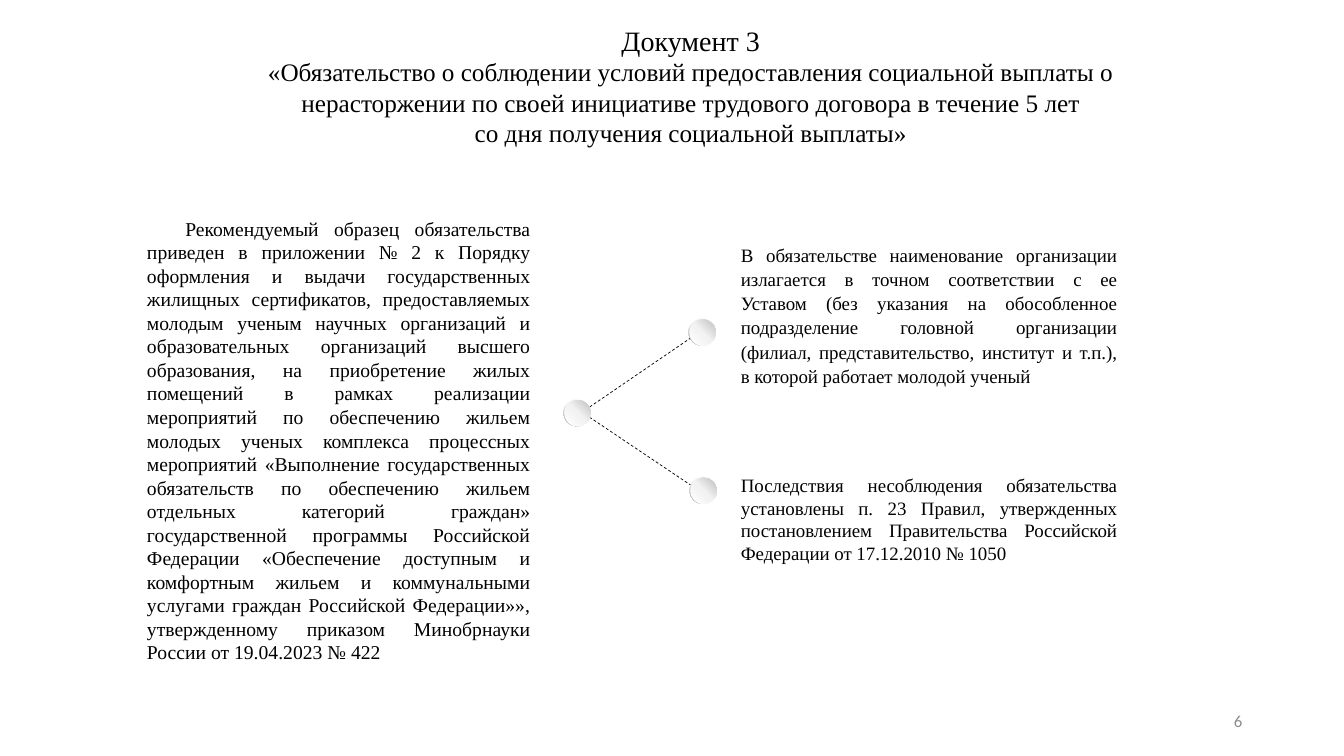
"""Builds the slide about the document 3 obligation."""
from copy import deepcopy

from lxml import etree
from pptx import Presentation
from pptx.dml.color import RGBColor
from pptx.enum import dml, shapes, text
from pptx.oxml import ns
from pptx.util import Inches, Pt

COLORS = {"text": "000000", "panel": "FFFFFF", "number": "8C8C8C", "light": "FFFFFF",
          "middle": "F2F2F2", "rim": "A6A6A6", "edge": "BFBFBF"}
SERIF = "Times New Roman"
ALIGN = text.PP_ALIGN

TITLE = [
    ("Документ 3", 20),
    ("«Обязательство о соблюдении условий предоставления социальной выплаты о "
     "нерасторжении по своей инициативе трудового договора в течение 5 лет", 18),
    ("со дня получения социальной выплаты»", 18),
]
SAMPLE = (
    "Рекомендуемый образец обязательства приведен в приложении № 2 к Порядку "
    "оформления и выдачи государственных жилищных сертификатов, предоставляемых "
    "молодым ученым научных организаций и образовательных организаций высшего "
    "образования, на приобретение жилых помещений в рамках реализации мероприятий "
    "по обеспечению жильем молодых ученых комплекса процессных мероприятий "
    "«Выполнение государственных обязательств по обеспечению жильем отдельных "
    "категорий граждан» государственной программы Российской Федерации "
    "«Обеспечение доступным и комфортным жильем и коммунальными услугами граждан "
    "Российской Федерации»», утвержденному приказом Минобрнауки России "
    "от 19.04.2023 № 422")
NAMING = (
    "В обязательстве наименование организации излагается в точном соответствии "
    "с ее Уставом (без указания на обособленное подразделение головной организации "
    "(филиал, представительство, институт и т.п.), в которой работает молодой ученый")
CONSEQUENCES = (
    "Последствия несоблюдения обязательства установлены п. 23 Правил, утвержденных "
    "постановлением Правительства Российской Федерации от 17.12.2010 № 1050")


def rgb(name):
    return RGBColor.from_string(COLORS[name])


def write(sp, lines, align, color="text", font=SERIF, grow=True):
    """Fill a shape with (text, size) paragraphs and return its text frame."""
    tf = sp.text_frame
    tf.word_wrap = True
    tf.auto_size = text.MSO_AUTO_SIZE.SHAPE_TO_FIT_TEXT if grow else text.MSO_AUTO_SIZE.NONE
    for i, (line, size) in enumerate(lines):
        p = tf.add_paragraph() if i else tf.paragraphs[0]
        p.text = line
        p.alignment = align
        p.font.name = font
        p.font.size = Pt(size)
        p.font.color.rgb = rgb(color)
    return tf


def add_text(s, box, *args, **options):
    return write(s.shapes.add_textbox(*map(Inches, box)), *args, **options)


def add_panel(s, box, line, size, indent):
    """Add a plain rectangle holding one paragraph with a first-line indent."""
    sp = s.shapes.add_shape(shapes.MSO_SHAPE.RECTANGLE, *map(Inches, box))
    sp.shadow.inherit = False
    sp.fill.solid()
    sp.fill.fore_color.rgb = rgb("panel")
    sp.line.fill.background()
    tf = write(sp, [(line, size)], ALIGN.JUSTIFY)
    tf.vertical_anchor = text.MSO_ANCHOR.TOP
    pPr = tf.paragraphs[0]._p.get_or_add_pPr()
    pPr.set("marL", "0")
    pPr.set("indent", str(Inches(indent)))


def add_dashed_line(s, start, end):
    line = s.shapes.add_connector(shapes.MSO_CONNECTOR.STRAIGHT, *map(Inches, start + end))
    line.line.color.rgb = rgb("text")
    line.line.width = Pt(0.5)
    line.line.dash_style = dml.MSO_LINE.DASH
    etree.SubElement(line._element.spPr, ns.qn("a:effectLst"))


def add_round(group, kind, left, top, size, stops, angle):
    """Add a round shape with a three-stop gradient to a group."""
    sp = group.shapes.add_shape(kind, *map(Inches, (left, top, size, size)))
    sp.shadow.inherit = False
    sp.line.fill.background()
    sp.fill.gradient()
    sp.fill.gradient_angle = angle
    gradient = sp._element.spPr.find(ns.qn("a:gradFill")).find(ns.qn("a:gsLst"))
    gradient.append(deepcopy(gradient[0]))
    for stop, (position, color) in zip(sp.fill.gradient_stops, stops):
        stop.position = position
        stop.color.rgb = rgb(color)
    return sp


def add_node(s, left, top):
    """Add a grouped ball: a thin ring under a disc."""
    group = s.shapes.add_group_shape()
    ring = add_round(group, shapes.MSO_SHAPE.DONUT, left, top, 0.27,
                     [(0, "light"), (0.55, "middle"), (1, "rim")], 225)
    ring.adjustments[0] = 0.049
    add_round(group, shapes.MSO_SHAPE.OVAL, left + 0.01, top + 0.01, 0.26,
              [(0, "light"), (0.51, "middle"), (1, "edge")], 45)


def main():
    prs = Presentation()
    prs.slide_width, prs.slide_height = Inches(13.33), Inches(7.5)
    s = prs.slides.add_slide(prs.slide_layouts[6])

    add_text(s, (2.04, 0.18, 9.62, 1.35), TITLE, ALIGN.CENTER)
    naming = add_text(s, (7.25, 2.35, 3.93, 1.56), [(NAMING, 13.5)], ALIGN.JUSTIFY)
    naming.paragraphs[0].line_spacing = 1.07
    naming.paragraphs[0].space_after = Pt(6)
    add_panel(s, (1.36, 2.1, 4, 4.58), SAMPLE, 14, 0.38)

    add_dashed_line(s, (7.06, 3.21), (5.64, 4.18))
    add_dashed_line(s, (5.64, 4), (7.07, 4.96))
    for left, top in [(6.83, 3.16), (6.84, 4.73), (5.59, 3.96)]:
        add_node(s, left, top)

    add_text(s, (7.25, 4.65, 3.93, 1.01), [(CONSEQUENCES, 13.5)], ALIGN.JUSTIFY)
    number = add_text(s, (9.42, 6.95, 3, 0.4), [("6", 12)], ALIGN.RIGHT,
                      color="number", font="Calibri", grow=False)
    number.vertical_anchor = text.MSO_ANCHOR.MIDDLE
    prs.save("out.pptx")


if __name__ == "__main__":
    main()
